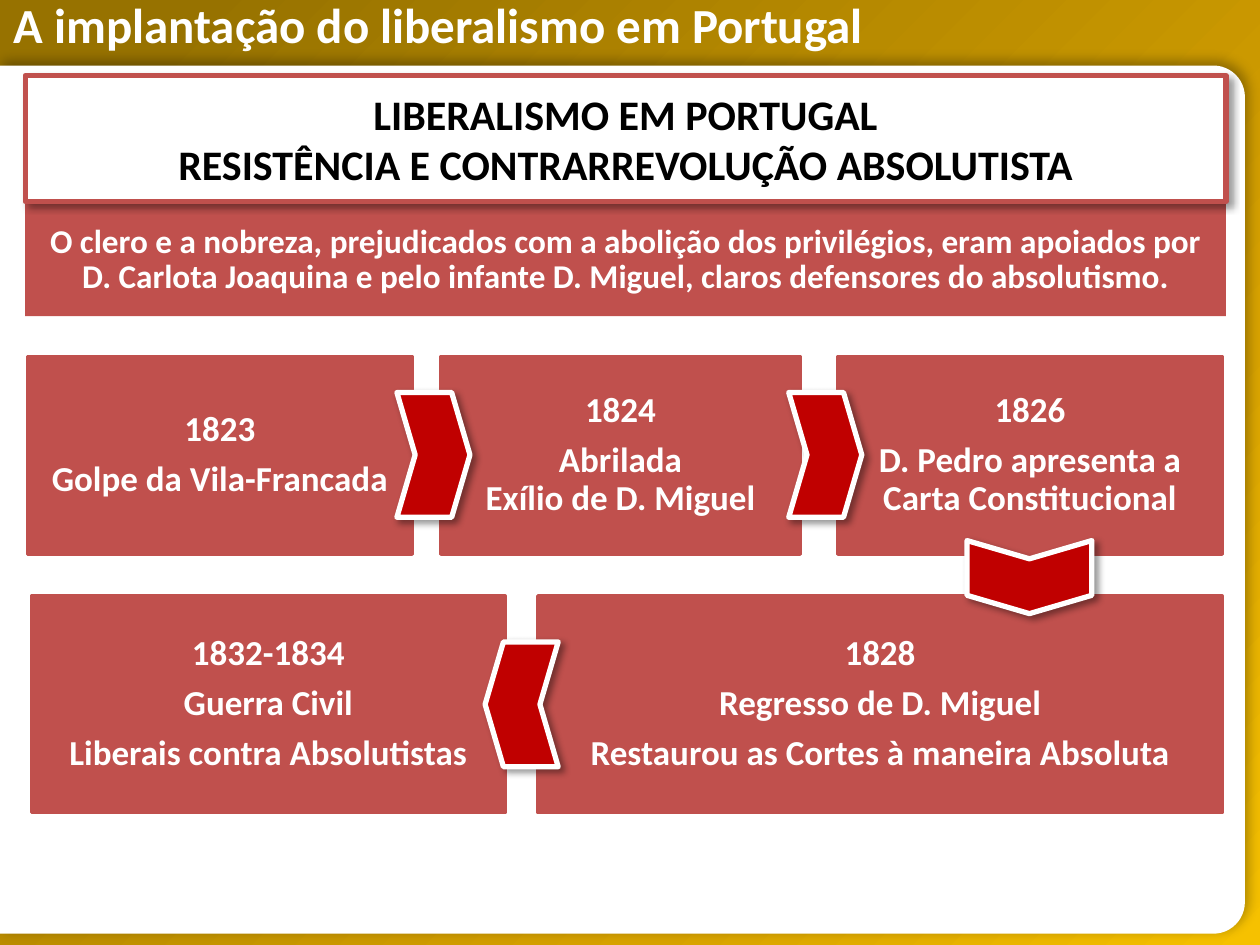
from copy import deepcopy
from dataclasses import dataclass

from lxml import etree
from pptx import Presentation
from pptx.dml.color import RGBColor
from pptx.enum.shapes import MSO_SHAPE
from pptx.enum.text import MSO_ANCHOR, PP_ALIGN
from pptx.oxml.ns import qn
from pptx.util import Inches, Pt

RECTANGLE = MSO_SHAPE.RECTANGLE
CHEVRON = MSO_SHAPE.CHEVRON
ROUNDED_SIDE = MSO_SHAPE.ROUND_2_SAME_RECTANGLE
MIDDLE, TOP = MSO_ANCHOR.MIDDLE, MSO_ANCHOR.TOP
CENTER, LEFT = PP_ALIGN.CENTER, PP_ALIGN.LEFT
COLUMNS, ROWS = 100, 75


@dataclass(frozen=True)
class Theme:
    font: str = "Calibri"
    gold: str = "CC9900"
    gradient: tuple = ((9, "977200"), (72, "D7A200"), (100, "F6C100"))
    white: str = "FFFFFF"
    black: str = "000000"
    brick: str = "C0504D"
    red: str = "C00000"
    title: int = 28
    heading: int = 24
    event: int = 20
    summary: int = 19


class SlideBuilder:
    def __init__(self, presentation, theme):
        self.theme = theme
        self.column = presentation.slide_width / COLUMNS
        self.row = presentation.slide_height / ROWS
        self.slide = presentation.slides.add_slide(presentation.slide_layouts[6])

    def place(self, left, top, width, height):
        return [round(size) for size in (left * self.column, top * self.row,
                                         width * self.column, height * self.row)]

    def shape(self, kind, area, fill, line=None, line_width=0):
        shape = self.slide.shapes.add_shape(kind, *self.place(*area))
        shape.shadow.inherit = False
        shape.fill.solid()
        shape.fill.fore_color.rgb = RGBColor.from_string(fill)
        if line:
            shape.line.color.rgb = RGBColor.from_string(line)
            shape.line.width = Pt(line_width)
        else:
            shape.line.fill.background()
        return shape

    def shadow(self, shape, opacity, blur, distance, angle):
        effects = shape._element.spPr.find(qn("a:effectLst"))
        outer = etree.SubElement(effects, qn("a:outerShdw"), blurRad=str(Pt(blur)),
                                 dist=str(Pt(distance)), dir=str(angle * 60000),
                                 algn="tl", rotWithShape="0")
        color = etree.SubElement(outer, qn("a:srgbClr"), val=self.theme.black)
        etree.SubElement(color, qn("a:alpha"), val=str(opacity * 1000))

    def text(self, shape, paragraphs, size, color, spacing=0.9, gap=0,
             align=CENTER, anchor=MIDDLE, inset=0.05):
        frame = shape.text_frame
        frame.word_wrap = True
        frame.vertical_anchor = anchor
        frame.margin_left = frame.margin_right = Inches(inset)
        frame.margin_top = frame.margin_bottom = Inches(0.05)
        for index, content in enumerate(paragraphs):
            paragraph = frame.add_paragraph() if index else frame.paragraphs[0]
            paragraph.alignment = align
            paragraph.line_spacing = spacing
            paragraph.space_after = Pt(gap)
            for number, line in enumerate(content.split("\n")):
                if number:
                    paragraph.add_line_break()
                run = paragraph.add_run()
                run.text = line
                run.font.name = self.theme.font
                run.font.size = Pt(size)
                run.font.bold = True
                run.font.color.rgb = RGBColor.from_string(color)

    def background(self):
        fill = self.slide.background.fill
        fill.solid()
        fill.fore_color.rgb = RGBColor.from_string(self.theme.gold)
        shape = self.shape(RECTANGLE, (0, 0, COLUMNS, ROWS), self.theme.gold)
        shape.fill.gradient()
        shape.fill.gradient_angle = 315
        stops = shape._element.spPr.find(qn("a:gradFill")).find(qn("a:gsLst"))
        stops.append(deepcopy(stops[0]))
        for stop, (position, color) in zip(stops, self.theme.gradient):
            stop.set("pos", str(position * 1000))
            stop.remove(stop[0])
            etree.SubElement(stop, qn("a:srgbClr"), val=color)

    def title(self, content, area):
        box = self.slide.shapes.add_textbox(*self.place(*area))
        self.text(box, [content], self.theme.title, self.theme.white,
                  spacing=Pt(16), align=LEFT, anchor=TOP, inset=0.1)

    def panel(self, top, width, height, radius):
        area = ((width - height) / 2, top + (height - width) / 2, height, width)
        shape = self.shape(ROUNDED_SIDE, area, self.theme.white)
        shape.adjustments[0] = radius / height
        shape.rotation = 90
        self.shadow(shape, 30, 7, 3, 315)

    def summary(self, content, area):
        shape = self.shape(RECTANGLE, area, self.theme.brick)
        self.text(shape, [content], self.theme.summary, self.theme.white,
                  gap=self.theme.summary * 0.35, inset=0.11)

    def heading(self, content, area):
        shape = self.shape(RECTANGLE, area, self.theme.white, self.theme.brick, 3)
        self.shadow(shape, 40, 4, 3, 45)
        self.text(shape, [content], self.theme.heading, self.theme.black,
                  spacing=1, inset=0.1)

    def event(self, paragraphs, area):
        shape = self.shape(RECTANGLE, area, self.theme.brick, self.theme.brick, 2)
        self.text(shape, paragraphs, self.theme.event, self.theme.white,
                  gap=self.theme.event * 0.35, inset=0.01)

    def arrow(self, center_x, center_y, rotation, width=5.8, height=9.9):
        area = (center_x - width / 2, center_y - height / 2, width, height)
        shape = self.shape(CHEVRON, area, self.theme.red, self.theme.white, 3)
        shape.adjustments[0] = 0.25
        shape.rotation = rotation
        self.shadow(shape, 40, 4, 3, 45)


EVENT_ROWS = (
    (28.3, 15.7, (
        (2.2, 30.5, ("1823", "Golpe da Vila-Francada")),
        (35, 28.5, ("1824", "Abrilada\nExílio de D. Miguel")),
        (66.5, 30.5, ("1826", "D. Pedro apresenta a\nCarta Constitucional")),
    )),
    (47.3, 17.2, (
        (2.5, 37.6, ("1832-1834", "Guerra Civil", "Liberais contra Absolutistas")),
        (42.7, 54.3, ("1828", "Regresso de D. Miguel",
                      "Restaurou as Cortes à maneira Absoluta")),
    )),
)
ARROWS = ((34.4, 36.1, 0), (65.5, 36.1, 0), (81.7, 45.8, 90), (41.4, 55.9, 180))


def main():
    presentation = Presentation()
    presentation.slide_width = Inches(10)
    presentation.slide_height = Inches(7.5)
    builder = SlideBuilder(presentation, Theme())
    builder.background()
    builder.title("A implantação do liberalismo em Portugal", (0.1, 1.5, 84, 3.3))
    builder.panel(top=5.2, width=98.8, height=68.9, radius=2.5)
    builder.summary(
        "O clero e a nobreza, prejudicados com a abolição dos privilégios, eram apoiados por\n"
        "D. Carlota Joaquina e pelo infante D. Miguel, claros defensores do absolutismo.",
        (2, 16.2, 95.3, 8.9))
    builder.heading("LIBERALISMO EM PORTUGAL\nRESISTÊNCIA E CONTRARREVOLUÇÃO ABSOLUTISTA",
                    (2, 6, 95.3, 10))
    for top, height, events in EVENT_ROWS:
        for left, width, paragraphs in events:
            builder.event(paragraphs, (left, top, width, height))
    for arrow in ARROWS:
        builder.arrow(*arrow)
    presentation.save("out.pptx")


if __name__ == "__main__":
    main()
